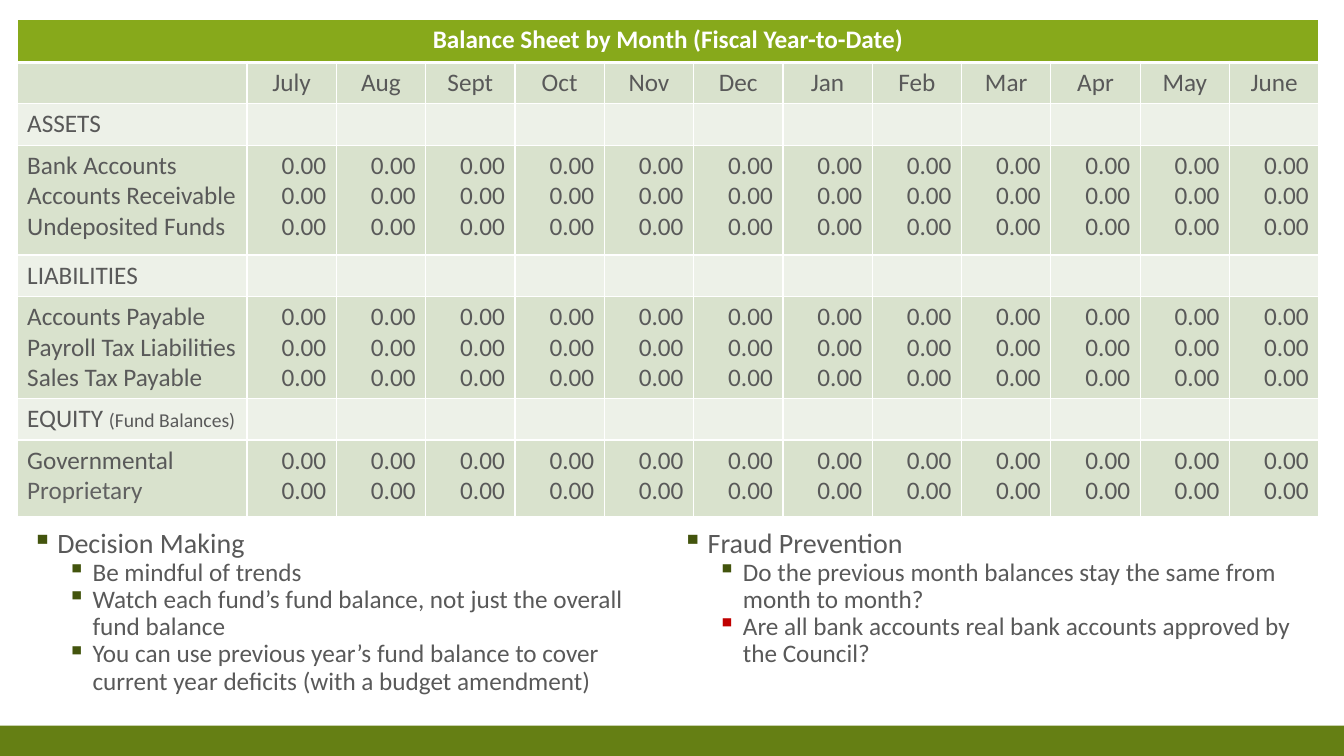
"""Build the monthly balance sheet slide with its guidance lists."""
from dataclasses import dataclass

from lxml import etree
from pptx import Presentation
from pptx.dml.color import RGBColor
from pptx.enum.shapes import MSO_SHAPE
from pptx.enum.text import PP_ALIGN
from pptx.oxml.ns import qn
from pptx.slide import Slide
from pptx.table import _Cell
from pptx.util import Inches, Pt

RECTANGLE = MSO_SHAPE.RECTANGLE
LEFT, CENTER, RIGHT = PP_ALIGN.LEFT, PP_ALIGN.CENTER, PP_ALIGN.RIGHT

WHITE = RGBColor(0xFF, 0xFF, 0xFF)
GRAY = RGBColor(0x59, 0x59, 0x59)
LIGHT_GRAY = RGBColor(0x61, 0x61, 0x61)
FOOTER_GREEN = RGBColor(0x65, 0x7F, 0x14)
TITLE_GREEN = RGBColor(0x87, 0xA9, 0x1B)
DARK_BAND = RGBColor(0xD9, 0xE2, 0xCD)
LIGHT_BAND = RGBColor(0xED, 0xF1, 0xE8)
BULLET_GREEN = RGBColor(0x43, 0x54, 0x0D)
BULLET_RED = RGBColor(0xC0, 0x00, 0x00)

FONT = "Calibri"
TITLE = "Balance Sheet by Month (Fiscal Year-to-Date)"
MONTHS = ["July", "Aug", "Sept", "Oct", "Nov", "Dec",
          "Jan", "Feb", "Mar", "Apr", "May", "June"]
LABEL_WIDTH, MONTH_WIDTH = 2.28, 0.886
TITLE_HEIGHT, LINE_HEIGHT = 0.43, 0.41


@dataclass(frozen=True)
class Section:
    heading: str
    accounts: list[str]
    height: float
    note: str = ""


@dataclass(frozen=True)
class Bullet:
    text: str
    level: int = 1
    color: RGBColor = BULLET_GREEN


@dataclass(frozen=True)
class Guidance:
    left: float
    width: float
    bullets: list[Bullet]


SECTIONS = [
    Section("ASSETS", ["Bank Accounts", "Accounts Receivable", "Undeposited Funds"], 1.09),
    Section("LIABILITIES", ["Accounts Payable", "Payroll Tax Liabilities", "Sales Tax Payable"], 1.01),
    Section("EQUITY ", ["Governmental", "Proprietary"], 0.76, note="(Fund Balances)"),
]
GUIDANCE = [
    Guidance(0.17, 6.5, [
        Bullet("Decision Making", level=0),
        Bullet("Be mindful of trends"),
        Bullet("Watch each fund’s fund balance, not just the overall fund balance"),
        Bullet("You can use previous year’s fund balance to cover "
               "current year deficits (with a budget amendment)"),
    ]),
    Guidance(6.62, 6.45, [
        Bullet("Fraud Prevention", level=0),
        Bullet("Do the previous month balances stay the same from month to month?"),
        Bullet("Are all bank accounts real bank accounts approved by the Council?",
               color=BULLET_RED),
    ]),
]


def add_text(paragraph, text: str, *, size: float = 18, color: RGBColor = GRAY,
             bold: bool = False, align: PP_ALIGN = LEFT) -> None:
    paragraph.alignment = align
    run = paragraph.add_run()
    run.text = text
    run.font.name = FONT
    run.font.size = Pt(size)
    run.font.bold = bold
    run.font.color.rgb = color


def style_cell(cell: _Cell, fill: RGBColor, *, top: float = 1, bottom: float = 1) -> None:
    properties = cell._tc.get_or_add_tcPr()
    for side, width in (("L", 1), ("R", 1), ("T", top), ("B", bottom)):
        line = etree.SubElement(properties, qn(f"a:ln{side}"), w=str(Pt(width)))
        solid = etree.SubElement(line, qn("a:solidFill"))
        etree.SubElement(solid, qn("a:srgbClr"), val=str(WHITE))
    cell.fill.solid()
    cell.fill.fore_color.rgb = fill


def fill_lines(cell: _Cell, lines: list[str], align: PP_ALIGN = LEFT) -> None:
    for index, line in enumerate(lines):
        paragraph = cell.text_frame.add_paragraph() if index else cell.text_frame.paragraphs[0]
        color = LIGHT_GRAY if line == "Proprietary" else GRAY
        add_text(paragraph, line, color=color, align=align)


def add_balance_sheet(slide: Slide) -> None:
    heights = [TITLE_HEIGHT, LINE_HEIGHT]
    for section in SECTIONS:
        heights += [LINE_HEIGHT, section.height]
    width = LABEL_WIDTH + MONTH_WIDTH * len(MONTHS)
    table = slide.shapes.add_table(
        len(heights), len(MONTHS) + 1, Inches(0.17), Inches(0.19),
        Inches(width), Inches(sum(heights))).table
    for index, column in enumerate(table.columns):
        column.width = Inches(MONTH_WIDTH if index else LABEL_WIDTH)
    for index, (row, height) in enumerate(zip(table.rows, heights)):
        row.height = Inches(height)
        band = DARK_BAND if index % 2 else LIGHT_BAND
        for cell in row.cells:
            style_cell(cell, band if index else TITLE_GREEN,
                       top=3 if index == 1 else 1, bottom=1 if index else 3)

    table.cell(0, 0).merge(table.cell(0, len(MONTHS)))
    add_text(table.cell(0, 0).text_frame.paragraphs[0], TITLE,
             color=WHITE, bold=True, align=CENTER)
    for column, month in enumerate(MONTHS, start=1):
        fill_lines(table.cell(1, column), [month], CENTER)
    for index, section in enumerate(SECTIONS):
        row = 2 + 2 * index
        heading = table.cell(row, 0)
        fill_lines(heading, [section.heading])
        if section.note:
            add_text(heading.text_frame.paragraphs[0], section.note, size=14)
        fill_lines(table.cell(row + 1, 0), section.accounts)
        for column in range(1, len(MONTHS) + 1):
            fill_lines(table.cell(row + 1, column), ["0.00"] * len(section.accounts), RIGHT)


def add_guidance(slide: Slide, guidance: Guidance) -> None:
    frame = slide.shapes.add_textbox(
        Inches(guidance.left), Inches(5.2), Inches(guidance.width), Inches(1.96)).text_frame
    frame.word_wrap = True
    for index, bullet in enumerate(guidance.bullets):
        paragraph = frame.add_paragraph() if index else frame.paragraphs[0]
        paragraph.level = bullet.level
        paragraph.line_spacing = 0.9
        properties = paragraph._p.get_or_add_pPr()
        properties.set("marL", str(Inches(0.3 + 0.35 * bullet.level)))
        properties.set("indent", str(Inches(-0.25)))
        bullet_color = etree.SubElement(properties, qn("a:buClr"))
        etree.SubElement(bullet_color, qn("a:srgbClr"), val=str(bullet.color))
        etree.SubElement(properties, qn("a:buChar"), char="▪")
        add_text(paragraph, bullet.text, size=18 if bullet.level else 20)


def add_footer(slide: Slide) -> None:
    footer = slide.shapes.add_shape(RECTANGLE, 0, Inches(7.2), Inches(13.33), Inches(0.3))
    footer.shadow.inherit = False
    footer.fill.solid()
    footer.fill.fore_color.rgb = FOOTER_GREEN
    footer.line.fill.background()


def main() -> None:
    presentation = Presentation()
    presentation.slide_width = Inches(13.33)
    presentation.slide_height = Inches(7.5)
    slide = presentation.slides.add_slide(presentation.slide_layouts[6])
    add_footer(slide)
    add_balance_sheet(slide)
    for guidance in GUIDANCE:
        add_guidance(slide, guidance)
    presentation.save("out.pptx")


if __name__ == "__main__":
    main()
